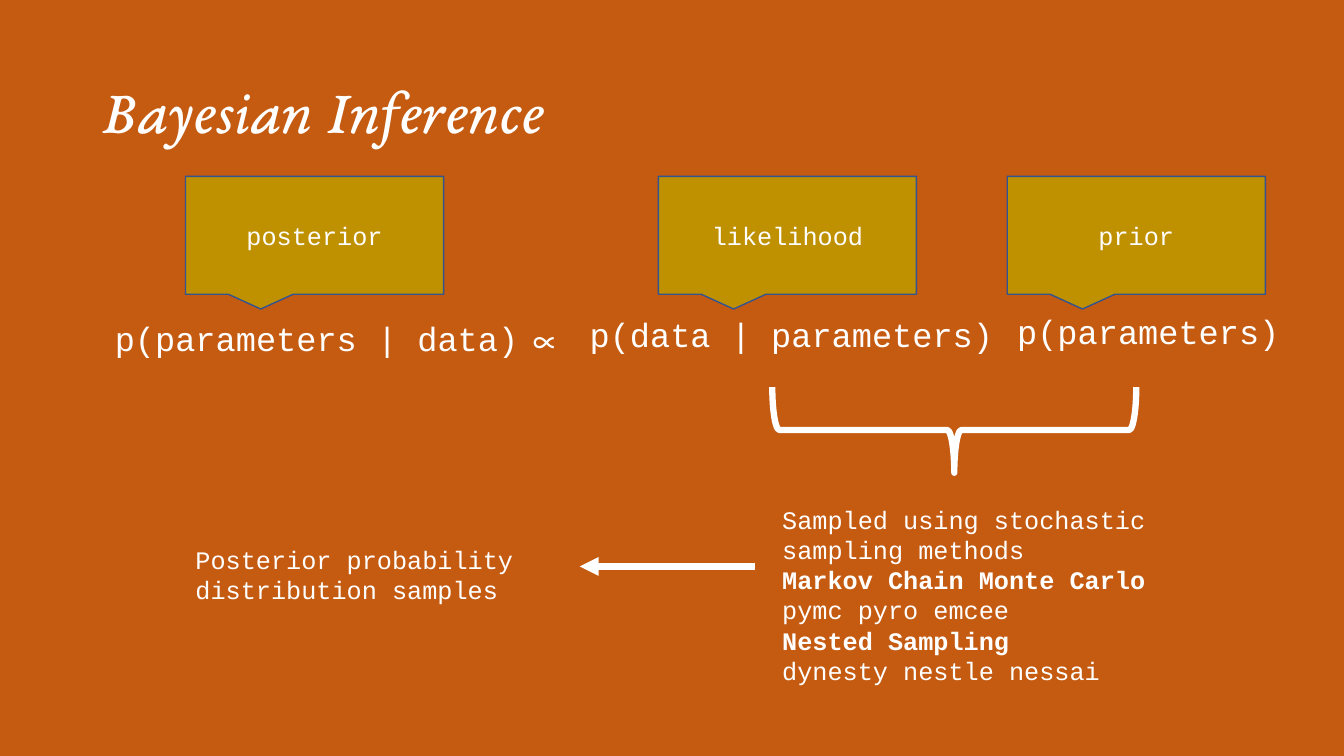
from lxml import etree
from pptx import Presentation
from pptx.dml.color import RGBColor
from pptx.enum.shapes import MSO_CONNECTOR, MSO_SHAPE
from pptx.enum.text import MSO_ANCHOR, PP_ALIGN
from pptx.oxml.ns import qn
from pptx.util import Inches, Pt

WHITE = "FFFFFF"


def color(hex_value):
    return RGBColor.from_string(hex_value)


def write(shape, lines, size, font="Courier New"):
    """Fill a shape with white paragraphs and return them."""
    frame = shape.text_frame
    frame.word_wrap = True
    frame.text = "\n".join(lines)
    for paragraph in frame.paragraphs:
        paragraph.font.name = font
        paragraph.font.size = Pt(size)
        paragraph.font.color.rgb = color(WHITE)
    return frame.paragraphs


presentation = Presentation()
presentation.slide_width = Inches(13.33)
presentation.slide_height = Inches(7.5)
slide = presentation.slides.add_slide(presentation.slide_layouts[6])
slide.background.fill.solid()
slide.background.fill.fore_color.rgb = color("C55A11")
shapes = slide.shapes

# Title
title = shapes.add_textbox(Inches(0.92), Inches(0.4), Inches(11.5), Inches(1.45))
title.text_frame.vertical_anchor = MSO_ANCHOR.MIDDLE
title_paragraph = write(title, ["Bayesian Inference"], 44, "EB Garamond")[0]
title_paragraph.font.italic = True
title_paragraph.line_spacing = 0.9

# Terms of the formula
terms = [
    ("p(parameters | data)", 1.04, 3.1, 4.78, 0.5, 24),
    ("p(data | parameters)", 5.75, 3.07, 4.4, 0.5, 24),
    ("p(parameters)", 9.99, 3.04, 3.2, 0.5, 24),
    ("∝", 5.19, 3.02, 1.03, 0.64, 32),
]
for text, left, top, width, height, size in terms:
    term = shapes.add_textbox(Inches(left), Inches(top), Inches(width), Inches(height))
    write(term, [text], size)

# Callouts naming the terms
for name, left in [("posterior", 1.84), ("likelihood", 6.53), ("prior", 9.99)]:
    callout = shapes.add_shape(MSO_SHAPE.RECTANGULAR_CALLOUT,
                               Inches(left), Inches(1.75), Inches(2.56), Inches(1.17))
    callout.shadow.inherit = False
    callout.fill.solid()
    callout.fill.fore_color.rgb = color("BF9000")
    callout.line.color.rgb = color("325491")
    callout.line.width = Pt(1)
    callout.text_frame.vertical_anchor = MSO_ANCHOR.MIDDLE
    write(callout, [name], 18)[0].alignment = PP_ALIGN.CENTER

# Brace under likelihood and prior
brace = shapes.add_shape(MSO_SHAPE.LEFT_BRACE,
                         Inches(9.04), Inches(2.46), Inches(0.85), Inches(3.61))
brace.rotation = 270
brace.shadow.inherit = False
brace.fill.background()
brace.line.color.rgb = color(WHITE)
brace.line.width = Pt(4.5)

# Sampling methods and their result
methods = shapes.add_textbox(Inches(7.66), Inches(4.95), Inches(4.39), Inches(1.92))
method_paragraphs = write(methods, [
    "Sampled using stochastic sampling methods",
    "Markov Chain Monte Carlo",
    "pymc pyro emcee",
    "Nested Sampling",
    "dynesty nestle nessai",
], 18)
for heading in method_paragraphs[1::2]:
    heading.font.bold = True

arrow = shapes.add_connector(MSO_CONNECTOR.STRAIGHT,
                             Inches(7.49), Inches(5.62), Inches(5.75), Inches(5.62))
arrow.line.color.rgb = color(WHITE)
arrow.line.width = Pt(4.5)
etree.SubElement(arrow.line._get_or_add_ln(), qn("a:tailEnd"), type="triangle")
etree.SubElement(arrow._element.spPr, qn("a:effectLst"))

samples = shapes.add_textbox(Inches(1.84), Inches(5.35), Inches(3.45), Inches(0.71))
write(samples, ["Posterior probability distribution samples"], 18)

presentation.save("out.pptx")
